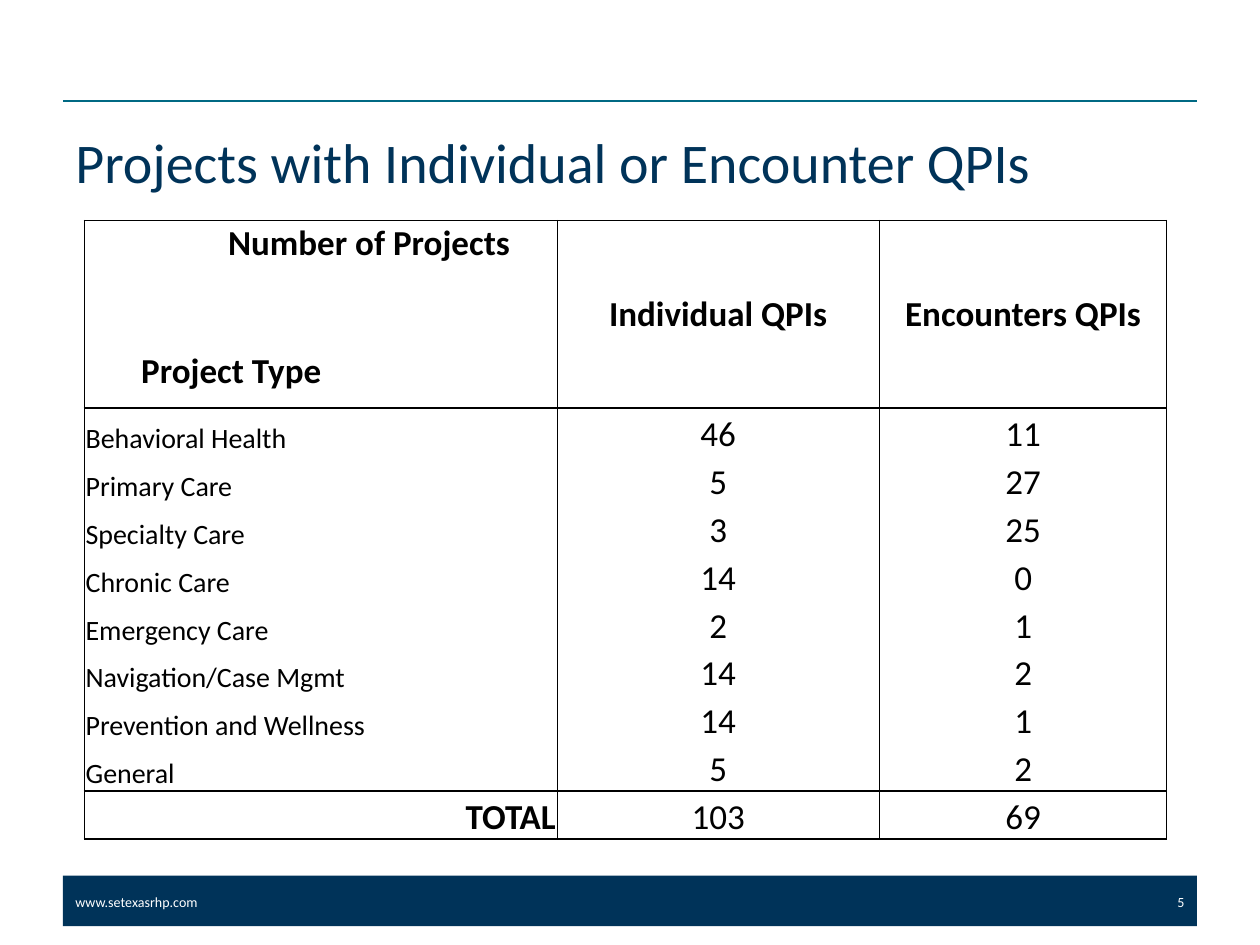
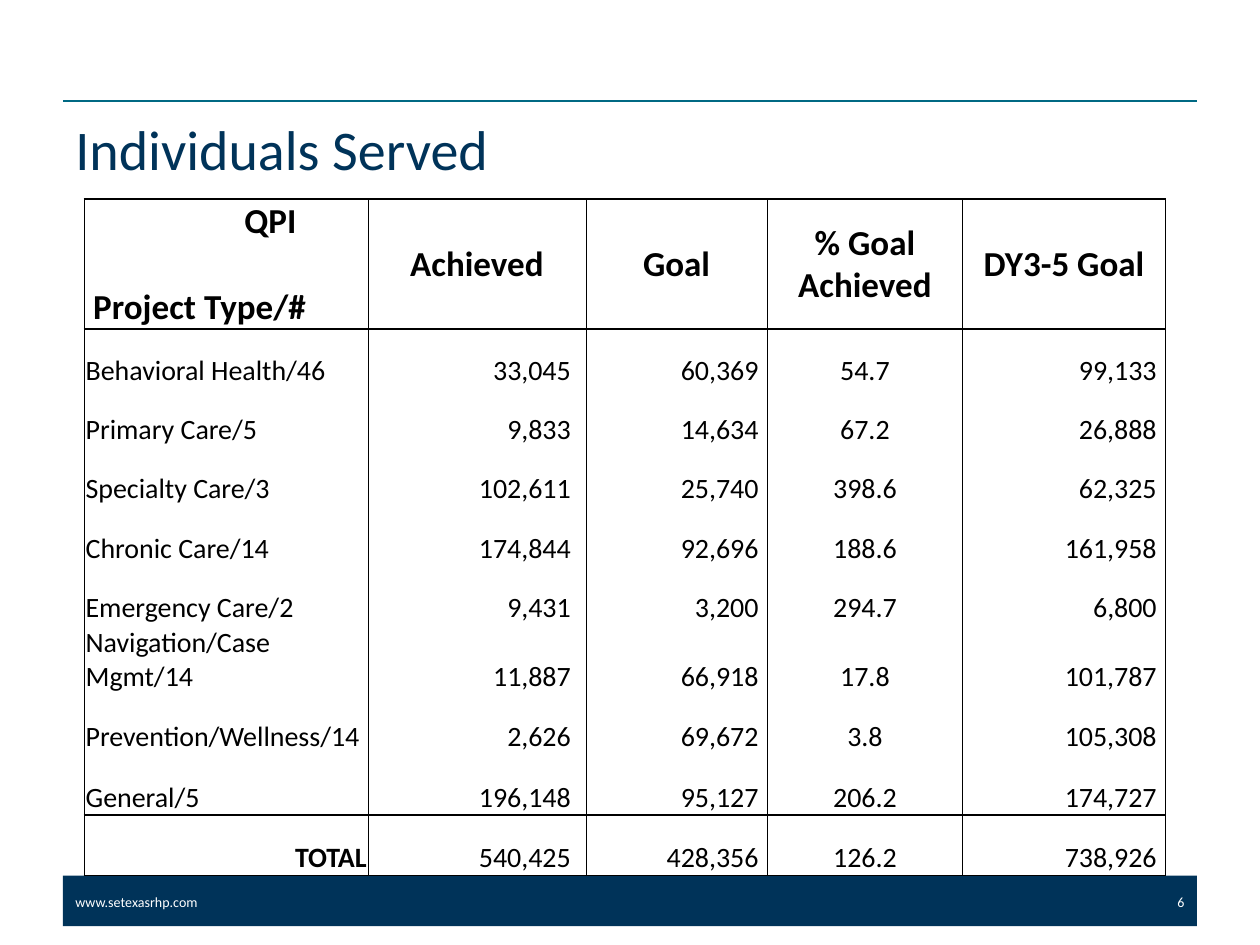
from lxml import etree
from pptx import Presentation
from pptx import util as u
from pptx.dml.color import RGBColor
from pptx.enum import shapes, text
from pptx.oxml import ns

NAVY = RGBColor(0x00, 0x33, 0x59)
TEAL = RGBColor(0x00, 0x69, 0x83)
BLACK = RGBColor(0x00, 0x00, 0x00)
WHITE = RGBColor(0xFF, 0xFF, 0xFF)
FONT = "Calibri"
NO_GRID_STYLE = "{2D5ABB26-0587-4C30-8999-92F81FD0307C}"
LEFT, CENTER, RIGHT = text.PP_ALIGN.LEFT, text.PP_ALIGN.CENTER, text.PP_ALIGN.RIGHT
TOP, MIDDLE, BOTTOM = text.MSO_ANCHOR.TOP, text.MSO_ANCHOR.MIDDLE, text.MSO_ANCHOR.BOTTOM

# Each corner label: text, left indent in inches, space before in points.
# Each value column: inset from the right edge in inches, or None when centred.
SLIDES = [
    dict(
        number="5", title="Projects with Individual or Encounter QPIs", title_height=0.95,
        table_top=1.75, columns=[3.75, 2.56, 2.28],
        heights=[1.49] + [0.38] * 9,
        corner=[("Number of Projects", 1.13, 0), ("Project Type", 0.44, 49)],
        headings=["Individual QPIs", "Encounters QPIs"],
        value_insets=[None, None], value_size=20,
        rows=[
            ("Behavioral Health", "46", "11"),
            ("Primary Care", "5", "27"),
            ("Specialty Care", "3", "25"),
            ("Chronic Care", "14", "0"),
            ("Emergency Care", "2", "1"),
            ("Navigation/Case Mgmt", "14", "2"),
            ("Prevention and Wellness", "14", "1"),
            ("General", "5", "2"),
            ("TOTAL", "103", "69"),
        ],
    ),
    dict(
        number="6", title="Individuals Served", title_height=0.75,
        table_top=1.58, columns=[2.25, 1.73, 1.44, 1.55, 1.61],
        heights=[1.03] + [0.47] * 5 + [0.55] + [0.48] * 3,
        corner=[("QPI", 1.26, 0), ("Project Type/#", 0.06, 24.4)],
        headings=["Achieved", "Goal", "% Goal Achieved", "DY3-5 Goal"],
        value_insets=[0.12, 0.07, None, 0.07], value_size=16,
        rows=[
            ("Behavioral Health/46", "33,045", "60,369", "54.7", "99,133"),
            ("Primary Care/5", "9,833", "14,634", "67.2", "26,888"),
            ("Specialty Care/3", "102,611", "25,740", "398.6", "62,325"),
            ("Chronic Care/14", "174,844", "92,696", "188.6", "161,958"),
            ("Emergency Care/2", "9,431", "3,200", "294.7", "6,800"),
            ("Navigation/Case Mgmt/14", "11,887", "66,918", "17.8", "101,787"),
            ("Prevention/Wellness/14", "2,626", "69,672", "3.8", "105,308"),
            ("General/5", "196,148", "95,127", "206.2", "174,727"),
            ("TOTAL", "540,425", "428,356", "126.2", "738,926"),
        ],
    ),
]


def write(frame, words, size, color, align=LEFT, bold=False):
    frame.text = words
    frame.word_wrap = True
    for paragraph in frame.paragraphs:
        paragraph.alignment = align
        for run in paragraph.runs:
            run.font.name = FONT
            run.font.size = u.Pt(size)
            run.font.bold = bold
            run.font.color.rgb = color


def set_borders(cell, widths):
    properties = cell._tc.get_or_add_tcPr()
    for side, width in zip("LRTB", widths):
        line = etree.SubElement(properties, ns.qn(f"a:ln{side}"), w=str(u.Pt(width)))
        if width:
            fill = etree.SubElement(line, ns.qn("a:solidFill"))
            etree.SubElement(fill, ns.qn("a:srgbClr"), val=str(BLACK))
        else:
            etree.SubElement(line, ns.qn("a:noFill"))


presentation = Presentation()
presentation.slide_width = u.Inches(10)
presentation.slide_height = u.Inches(7.5)

for content in SLIDES:
    slide = presentation.slides.add_slide(presentation.slide_layouts[6])

    # Footer band
    band = slide.shapes.add_shape(shapes.MSO_SHAPE.RECTANGLE, u.Inches(0.5), u.Inches(6.95),
                                  u.Inches(9), u.Inches(0.4))
    band.shadow.inherit = False
    band.fill.solid()
    band.fill.fore_color.rgb = NAVY
    band.line.fill.background()

    # Rule above the title
    rule = slide.shapes.add_connector(shapes.MSO_CONNECTOR.STRAIGHT, u.Inches(0.5), u.Inches(0.8),
                                      u.Inches(9.5), u.Inches(0.8))
    rule.line.color.rgb = TEAL
    rule.line.width = u.Pt(1)
    etree.SubElement(rule._element.spPr, ns.qn("a:effectLst"))

    # Web address, slide number and title
    for words, left, top, width, height, size, color, align in [
        ("www.setexasrhp.com", 0.5, 6.95, 3.08, 0.41, 8, WHITE, LEFT),
        (content["number"], 8, 6.95, 1.5, 0.41, 8, WHITE, RIGHT),
        (content["title"], 0.5, 0.8, 9, content["title_height"], 32, NAVY, LEFT),
    ]:
        box = slide.shapes.add_textbox(u.Inches(left), u.Inches(top),
                                       u.Inches(width), u.Inches(height))
        box.text_frame.vertical_anchor = MIDDLE
        write(box.text_frame, words, size, color, align)

    # Table grid
    columns, heights = content["columns"], content["heights"]
    frame = slide.shapes.add_table(len(heights), len(columns), u.Inches(0.67),
                                   u.Inches(content["table_top"]),
                                   u.Inches(sum(columns)), u.Inches(sum(heights)))
    table = frame.table
    table.horz_banding = False
    table._tbl.tblPr.find(ns.qn("a:tableStyleId")).text = NO_GRID_STYLE
    for column, width in zip(table.columns, columns):
        column.width = u.Inches(width)
    for row, height in zip(table.rows, heights):
        row.height = u.Inches(height)

    # Table cells
    corner_words = "\n".join(label for label, indent, space in content["corner"])
    grid = [[corner_words] + content["headings"]] + content["rows"]
    last_row, last_column = len(heights) - 1, len(columns) - 1
    for r, values in enumerate(grid):
        is_header, is_total = r == 0, r == last_row
        for c, words in enumerate(values):
            cell = table.cell(r, c)
            cell.margin_left = cell.margin_right = cell.margin_top = u.Inches(0.01)
            cell.margin_bottom = 0
            inset = content["value_insets"][c - 1] if c else None
            size, align = content["value_size"], CENTER
            if is_header:
                size = 20
                cell.vertical_anchor = MIDDLE if c else TOP
                align = CENTER if c else LEFT
            else:
                cell.vertical_anchor = BOTTOM
                if c == 0:
                    align = RIGHT if is_total else LEFT
                    size = size if is_total else 16
                elif inset is not None:
                    align = RIGHT
                    cell.margin_right = u.Inches(inset)
            write(cell.text_frame, words, size, BLACK, align,
                  bold=is_header or (is_total and c == 0))
            set_borders(cell, [
                0.5 if c else 1,
                1 if c == last_column else 0.5,
                1 if r in (0, 1, last_row) else 0,
                1 if r in (0, last_row - 1, last_row) else 0,
            ])
            cell.fill.background()

    # Staggered labels in the corner cell
    for paragraph, (label, indent, space) in zip(table.cell(0, 0).text_frame.paragraphs,
                                                 content["corner"]):
        paragraph._p.get_or_add_pPr().set("marL", str(u.Inches(indent)))
        if space:
            paragraph.space_before = u.Pt(space)

presentation.save("out.pptx")
